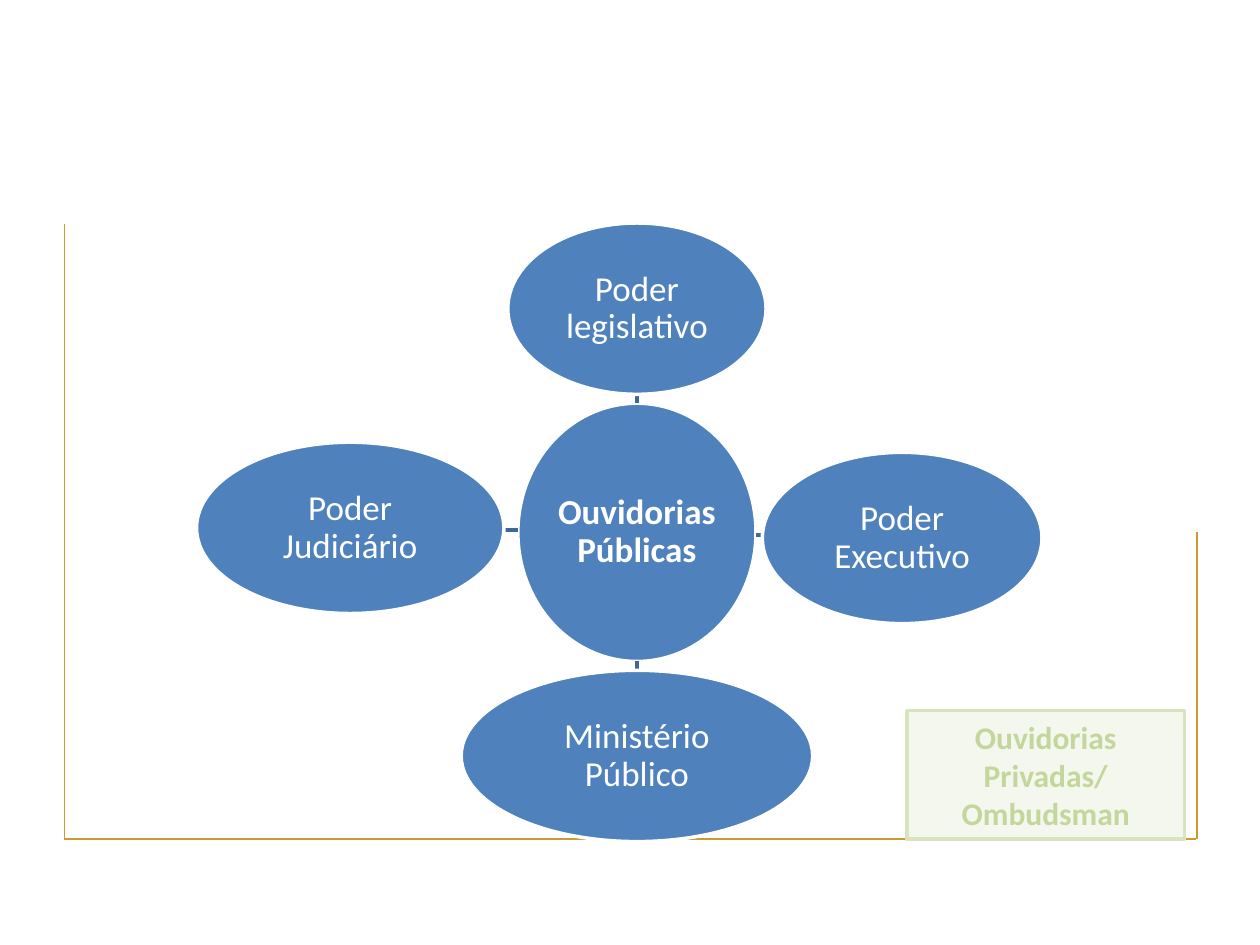
from lxml import etree
from pptx import Presentation
from pptx.dml.color import RGBColor
from pptx.enum.shapes import MSO_CONNECTOR, MSO_SHAPE
from pptx.enum.text import MSO_ANCHOR, PP_ALIGN
from pptx.oxml.ns import qn
from pptx.util import Inches, Pt

STRAIGHT = MSO_CONNECTOR.STRAIGHT
OVAL, PROCESS = MSO_SHAPE.OVAL, MSO_SHAPE.FLOWCHART_PROCESS
MIDDLE, CENTER = MSO_ANCHOR.MIDDLE, PP_ALIGN.CENTER
TOP, LEFT, BOTTOM, RIGHT = range(4)
# An oval has eight connection sites, counted from the top to the left
OVAL_SITE = {TOP: 0, LEFT: 2, BOTTOM: 4, RIGHT: 6}

WHITE = RGBColor(0xFF, 0xFF, 0xFF)
BLUE = RGBColor(0x4F, 0x81, 0xBD)
DARK_BLUE = RGBColor(0x3F, 0x67, 0x97)
GOLD = RGBColor(0xCC, 0x99, 0x33)
PALE_GREEN = RGBColor(0xEB, 0xF1, 0xDE)
LIGHT_GREEN = RGBColor(0xD7, 0xE4, 0xBD)
GREEN = RGBColor(0xC3, 0xD6, 0x9B)

# Content: text and box (left, top, width, height) in inches
FRAME = [(0.51, 1.78, 0.51, 6.66), (0.51, 6.66, 9.49, 6.66), (9.5, 6.66, 9.5, 4.22)]
HUB = ("Ouvidorias Públicas", (4.11, 3.2, 1.89, 2.05))
BRANCHES = [
    ("Poder legislativo", (4.03, 1.77, 2.05, 1.36), TOP),
    ("Poder Executivo", (6.05, 3.59, 2.22, 1.36), RIGHT),
    ("Ministério Público", (3.66, 5.32, 2.79, 1.36), BOTTOM),
    ("Poder Judiciário", (1.56, 3.51, 2.44, 1.36), LEFT),
]
PRIVATE = (["Ouvidorias Privadas/", "Ombudsman"], (7.2, 5.64, 2.2, 1.02))

OVAL_FONT = {"name": "Calibri", "size": Pt(20), "bold": False}
HUB_FONT = {**OVAL_FONT, "bold": True}
PRIVATE_FONT = {"name": "Calibri", "size": Pt(18), "bold": True}
OVAL_MARGINS = dict.fromkeys(
    ("margin_left", "margin_top", "margin_right", "margin_bottom"), Inches(0.01))


def set_all(target, values):
    for name, value in values.items():
        setattr(target, name, value)


def add_line(slide, ends, color, width):
    line = slide.shapes.add_connector(STRAIGHT, *map(Inches, ends))
    line.line.color.rgb = color
    line.line.width = Pt(width)
    etree.SubElement(line._element.spPr, qn("a:effectLst"))
    return line


def add_box(slide, kind, box, texts, colors, font, paragraph_format=None, margins=None):
    fill, outline, text_color = colors
    shape = slide.shapes.add_shape(kind, *map(Inches, box))
    shape.shadow.inherit = False
    shape.fill.solid()
    shape.fill.fore_color.rgb = fill
    shape.line.color.rgb = outline
    shape.line.width = Pt(2)
    frame = shape.text_frame
    set_all(frame, {"word_wrap": True, "vertical_anchor": MIDDLE, **(margins or {})})
    for index, text in enumerate(texts):
        paragraph = frame.add_paragraph() if index else frame.paragraphs[0]
        set_all(paragraph, {"alignment": CENTER, **(paragraph_format or {})})
        run = paragraph.add_run()
        run.text = text
        set_all(run.font, font)
        run.font.color.rgb = text_color
    return shape


def add_oval(slide, text, box, font):
    return add_box(slide, OVAL, box, [text], (BLUE, WHITE, WHITE), font,
                   {"line_spacing": 0.9}, OVAL_MARGINS)


def link_ends(hub_box, box, side):
    """Ends of the short line from the hub to the branch on the given side."""
    left, top, width, height = hub_box
    branch_left, branch_top, branch_width, branch_height = box
    if side in (TOP, BOTTOM):
        x = left + width / 2
        if side == TOP:
            return x, top, x, branch_top + branch_height
        return x, top + height, x, branch_top
    y = (top + height / 2 + branch_top + branch_height / 2) / 2
    if side == RIGHT:
        return left + width, y, branch_left, y
    return left, y, branch_left + branch_width, y


def main():
    presentation = Presentation()
    presentation.slide_width, presentation.slide_height = Inches(10), Inches(7.5)
    slide = presentation.slides.add_slide(presentation.slide_layouts[6])

    # Thin frame
    for ends in FRAME:
        add_line(slide, ends, GOLD, 0.75)

    # Hub with its four branches
    hub_text, hub_box = HUB
    hub = add_oval(slide, hub_text, hub_box, HUB_FONT)
    for text, box, side in BRANCHES:
        ends = link_ends(hub_box, box, side)
        link = add_line(slide, ends, DARK_BLUE, 2)
        branch = add_oval(slide, text, box, OVAL_FONT)
        if side in (TOP, BOTTOM):
            # The method places the ends for four sides; the site index is then the oval's
            link.begin_connect(hub, side)
            link.end_connect(branch, BOTTOM - side)
            properties = link._element.nvCxnSpPr.cNvCxnSpPr
            properties.stCxn.set("idx", str(OVAL_SITE[side]))
            properties.endCxn.set("idx", str(OVAL_SITE[BOTTOM - side]))

    # Half-transparent box for the private sector
    texts, box = PRIVATE
    private = add_box(slide, PROCESS, box, texts,
                      (PALE_GREEN, LIGHT_GREEN, GREEN), PRIVATE_FONT)
    fill_color = private._element.spPr.find(qn("a:solidFill")).find(qn("a:srgbClr"))
    etree.SubElement(fill_color, qn("a:alpha"), val="54000")

    presentation.save("out.pptx")


if __name__ == "__main__":
    main()
